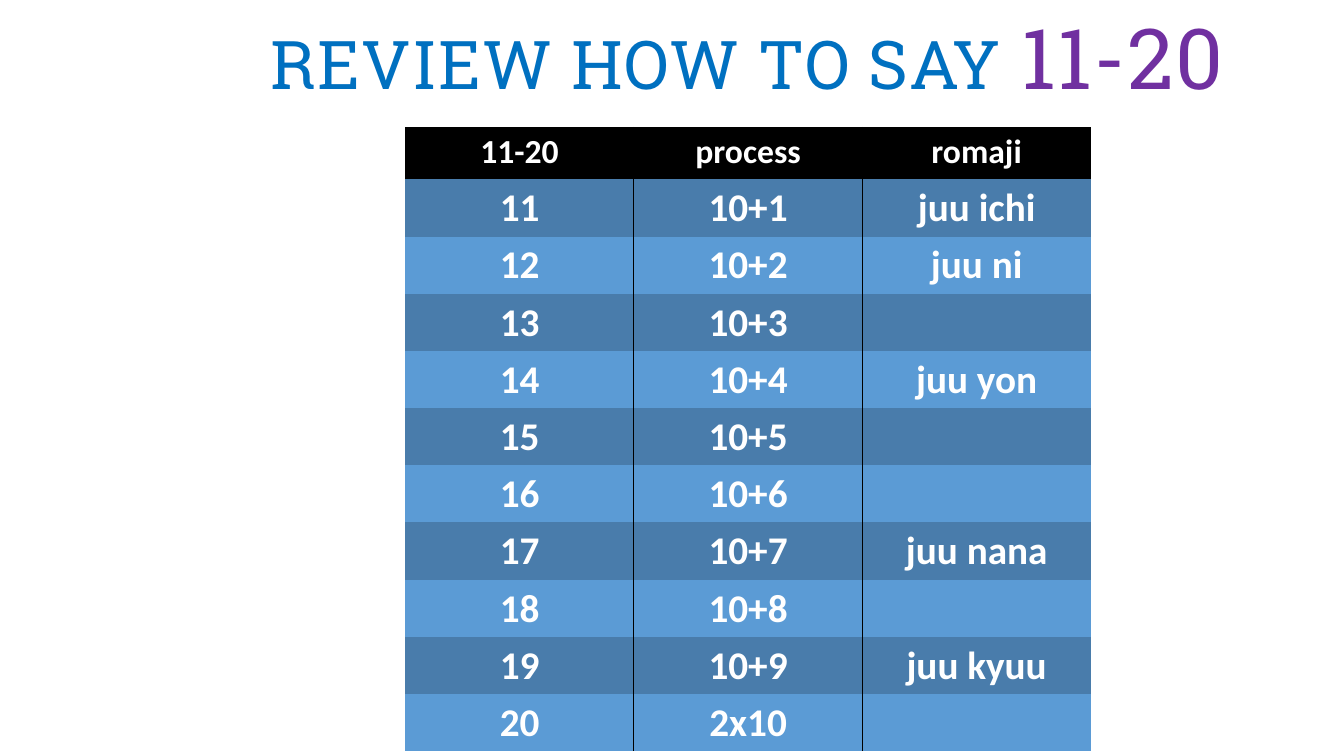
from lxml.etree import SubElement
from pptx import Presentation
from pptx.dml.color import RGBColor
from pptx.enum.text import MSO_ANCHOR, MSO_AUTO_SIZE, PP_ALIGN
from pptx.oxml.ns import qn
from pptx.util import Inches, Pt

BLACK = RGBColor(0x00, 0x00, 0x00)
WHITE = RGBColor(0xFF, 0xFF, 0xFF)
BLUE = RGBColor(0x00, 0x70, 0xC0)
PURPLE = RGBColor(0x70, 0x30, 0xA0)
DARK_BAND = RGBColor(0x49, 0x7C, 0xAB)
LIGHT_BAND = RGBColor(0x5B, 0x9B, 0xD5)

NO_GRID_STYLE = "{2D5ABB26-0587-4C30-8999-92F81FD0307C}"
HEADER = ("11-20", "process", "romaji")
ROMAJI = {11: "juu ichi", 12: "juu ni", 14: "juu yon", 17: "juu nana", 19: "juu kyuu"}


def add_run(p, text, color, **formats):
    r = p.add_run()
    r.text = text
    r.font.color.rgb = color
    for name, value in formats.items():
        setattr(r.font, name, value)
    return r


def add_title(s):
    sp = s.shapes.title
    sp.left, sp.top, sp.width, sp.height = map(Inches, (2.58, 0, 10.6, 1.11))
    tf = sp.text_frame
    formats = {"word_wrap": True, "vertical_anchor": MSO_ANCHOR.TOP,
               "auto_size": MSO_AUTO_SIZE.SHAPE_TO_FIT_TEXT}
    for name, value in formats.items():
        setattr(tf, name, value)
    p = tf.paragraphs[0]
    p.alignment = PP_ALIGN.LEFT
    for text, size, color in (("REVIEW HOW TO SAY ", 48, BLUE), ("11-20", 60, PURPLE)):
        r = add_run(p, text, color, size=Pt(size), name="Roboto Slab")
        r.font._element.set("spc", "100")


def add_border(cell, side):
    """Draw a thin black line on side L or R of the cell."""
    ln = SubElement(cell._tc.get_or_add_tcPr(), qn(f"a:ln{side}"), w=str(Pt(1)))
    fill = SubElement(ln, qn("a:solidFill"))
    SubElement(fill, qn("a:srgbClr"), val=str(BLACK))


def fill_cell(cell, text, size, color):
    cell.fill.solid()
    cell.fill.fore_color.rgb = color
    p = cell.text_frame.paragraphs[0]
    p.alignment = PP_ALIGN.CENTER
    p.font.size = Pt(size)
    if text:
        add_run(p, text, WHITE, size=Pt(size), name="Calibri", bold=True)


def add_number_table(s):
    numbers = [(str(n), f"10+{n - 10}" if n < 20 else "2x10", ROMAJI.get(n, ""))
               for n in range(11, 21)]
    rows = [HEADER] + numbers
    frame = s.shapes.add_table(len(rows), len(HEADER), Inches(4.02), Inches(1.26),
                               Inches(6.8), Inches(0.52 * len(rows)))
    table = frame.table
    table.first_row = table.horz_banding = False
    table._tbl.tblPr.find(qn("a:tableStyleId")).text = NO_GRID_STYLE
    for i, row in enumerate(rows):
        table.rows[i].height = Inches(0.52)
        band = DARK_BAND if i % 2 else LIGHT_BAND
        size, color = (28, band) if i else (24, BLACK)
        for j, text in enumerate(row):
            cell = table.cell(i, j)
            if j > 0:
                add_border(cell, "L")
            if j < len(row) - 1:
                add_border(cell, "R")
            fill_cell(cell, text, size, color)


def main():
    prs = Presentation()
    prs.slide_width, prs.slide_height = Inches(13.33), Inches(7.5)
    s = prs.slides.add_slide(prs.slide_layouts[5])
    add_title(s)
    add_number_table(s)
    prs.save("out.pptx")


if __name__ == "__main__":
    main()
